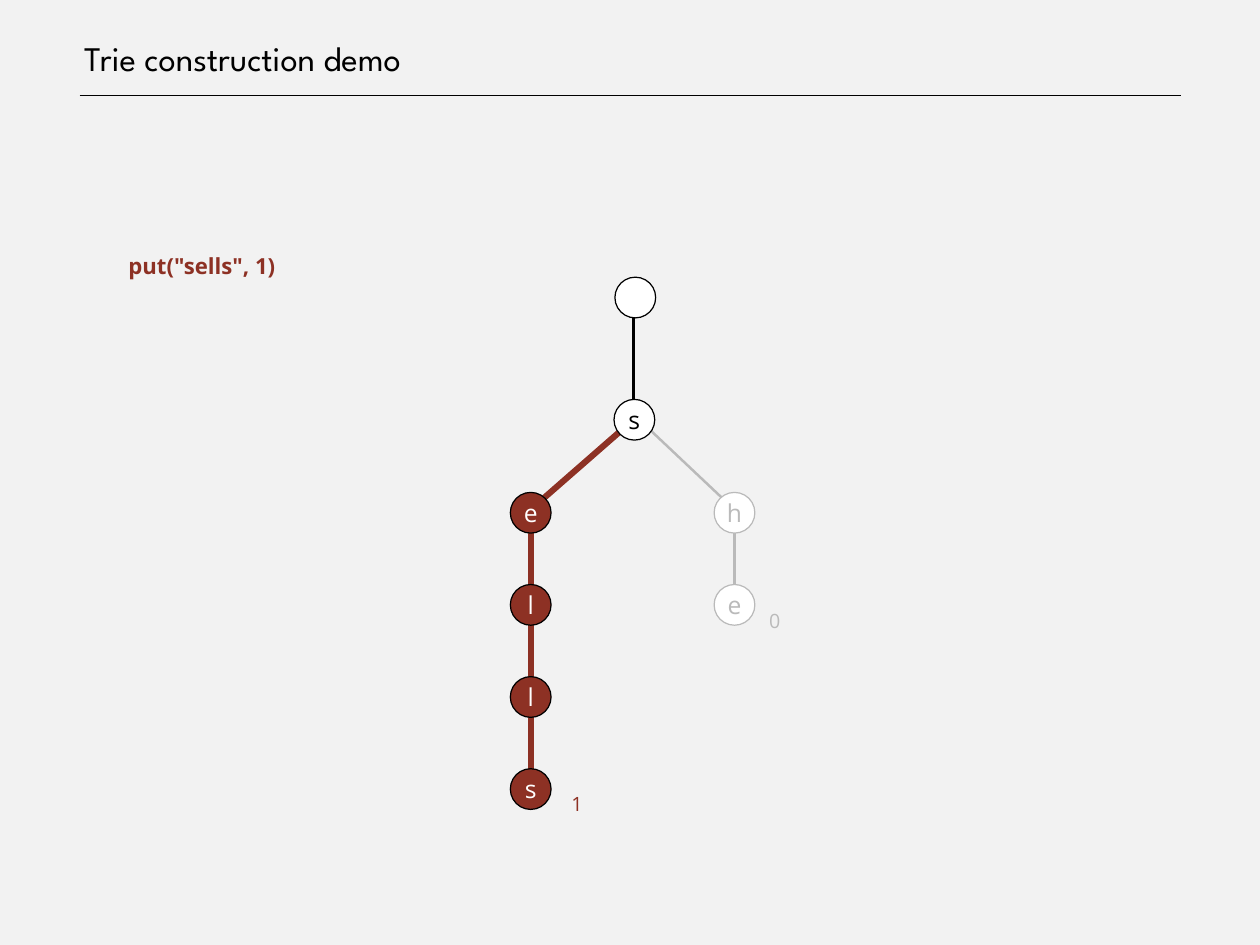
from dataclasses import dataclass

from pptx import Presentation
from pptx.dml.color import RGBColor
from pptx.enum.shapes import MSO_CONNECTOR as Connector, MSO_SHAPE as Shape
from pptx.enum.text import MSO_ANCHOR as Anchor, MSO_AUTO_SIZE as AutoSize, PP_ALIGN as Align
from pptx.oxml.ns import qn
from pptx.slide import Slide
from pptx.util import Inches, Pt
from lxml.etree import SubElement

COLORS = {
    "page": "F2F2F2",
    "black": "000000",
    "white": "FFFFFF",
    "gray": "BABABA",
    "red": "8D3124",
}
BODY_FONT = "Open Sans"
TITLE_FONT = "League Spartan"
DIAMETER = 0.46
LEVELS = [3.13, 4.51, 5.56, 6.6, 7.64, 8.68]
LEFT_BRANCH, RIGHT_BRANCH = 5.76, 8.06


@dataclass
class Edge:
    x1: float
    y1: float
    x2: float
    y2: float
    color: str
    width: float


@dataclass
class Node:
    letter: str
    left: float
    level: int
    fill: str = "white"
    outline: str = "black"
    ink: str = "black"


@dataclass
class Label:
    text: str
    left: float
    top: float
    width: float
    height: float
    color: str
    size: float = 16
    font: str = BODY_FONT
    bold: bool = False
    inset: float = 0.06
    spacing: float = 1.5
    anchor: Anchor = Anchor.TOP
    auto_size: AutoSize = AutoSize.SHAPE_TO_FIT_TEXT


EDGES = [
    Edge(0.9, 1.08, 13.33, 1.08, "black", 1),  # rule below the title
    Edge(8.2, 5.67, 7.3, 4.82, "gray", 2),
    Edge(8.29, 6.75, 8.29, 5.61, "gray", 2),
    Edge(5.99, 8.98, 5.99, 7.72, "red", 5),
    Edge(5.99, 7.87, 5.99, 6.61, "red", 5),
    Edge(5.99, 6.97, 5.99, 5.64, "red", 5),
    Edge(6.12, 5.64, 7.08, 4.8, "red", 5),
    Edge(7.15, 4.68, 7.15, 3.44, "black", 2),
]
NODES = [
    Node("", 6.94, 0),
    Node("s", 6.93, 1),
    *(Node(letter, RIGHT_BRANCH, level, outline="gray", ink="gray")
      for level, letter in enumerate("he", start=2)),
    *(Node(letter, LEFT_BRANCH, level, fill="red", ink="white")
      for level, letter in enumerate("ells", start=2)),
]
LABELS = [
    Label("Trie construction demo", 0.89, 0, 12.44, 0.89, "black", 28, TITLE_FONT,
          inset=0, spacing=1, anchor=Anchor.BOTTOM, auto_size=AutoSize.NONE),
    Label('put("sells", 1)', 1.33, 2.64, 1.93, 0.4, "red", 18, bold=True),
    Label("1", 6.33, 8.75, 0.33, 0.38, "red"),
    Label("0", 8.56, 6.68, 0.33, 0.38, "gray"),
]


def rgb(name: str) -> RGBColor:
    return RGBColor.from_string(COLORS[name])


def draw_edge(page: Slide, edge: Edge) -> None:
    line = page.shapes.add_connector(
        Connector.STRAIGHT, Inches(edge.x1), Inches(edge.y1), Inches(edge.x2), Inches(edge.y2))
    line.line.color.rgb = rgb(edge.color)
    line.line.width = Pt(edge.width)
    SubElement(line._element.spPr, qn("a:effectLst"))


def draw_node(page: Slide, node: Node) -> None:
    circle = page.shapes.add_shape(
        Shape.OVAL, Inches(node.left), Inches(LEVELS[node.level]),
        Inches(DIAMETER), Inches(DIAMETER))
    circle.shadow.inherit = False
    circle.fill.solid()
    circle.fill.fore_color.rgb = rgb(node.fill)
    circle.line.color.rgb = rgb(node.outline)
    circle.line.width = Pt(1)
    if not node.letter:
        return
    frame = circle.text_frame
    frame.margin_left = frame.margin_right = frame.margin_top = frame.margin_bottom = 0
    frame.vertical_anchor = Anchor.MIDDLE
    para = frame.paragraphs[0]
    para.text = node.letter
    para.alignment = Align.CENTER
    para.font.name = BODY_FONT
    para.font.size = Pt(20)
    para.font.color.rgb = rgb(node.ink)


def draw_label(page: Slide, label: Label) -> None:
    box = page.shapes.add_textbox(
        Inches(label.left), Inches(label.top), Inches(label.width), Inches(label.height))
    frame = box.text_frame
    frame.word_wrap = True
    frame.auto_size = label.auto_size
    frame.vertical_anchor = label.anchor
    frame.margin_left = Inches(label.inset + 0.06)
    frame.margin_right = frame.margin_top = frame.margin_bottom = Inches(label.inset)
    para = frame.paragraphs[0]
    para.text = label.text
    para.line_spacing = label.spacing
    para.font.name = label.font
    para.font.size = Pt(label.size)
    para.font.bold = label.bold
    para.font.color.rgb = rgb(label.color)


def main() -> None:
    deck = Presentation()
    deck.slide_width, deck.slide_height = Inches(14.22), Inches(10.67)
    page = deck.slides.add_slide(deck.slide_layouts[6])
    page.background.fill.solid()
    page.background.fill.fore_color.rgb = rgb("page")
    for edge in EDGES:
        draw_edge(page, edge)
    for node in NODES:
        draw_node(page, node)
    for label in LABELS:
        draw_label(page, label)
    deck.save("out.pptx")


if __name__ == "__main__":
    main()
